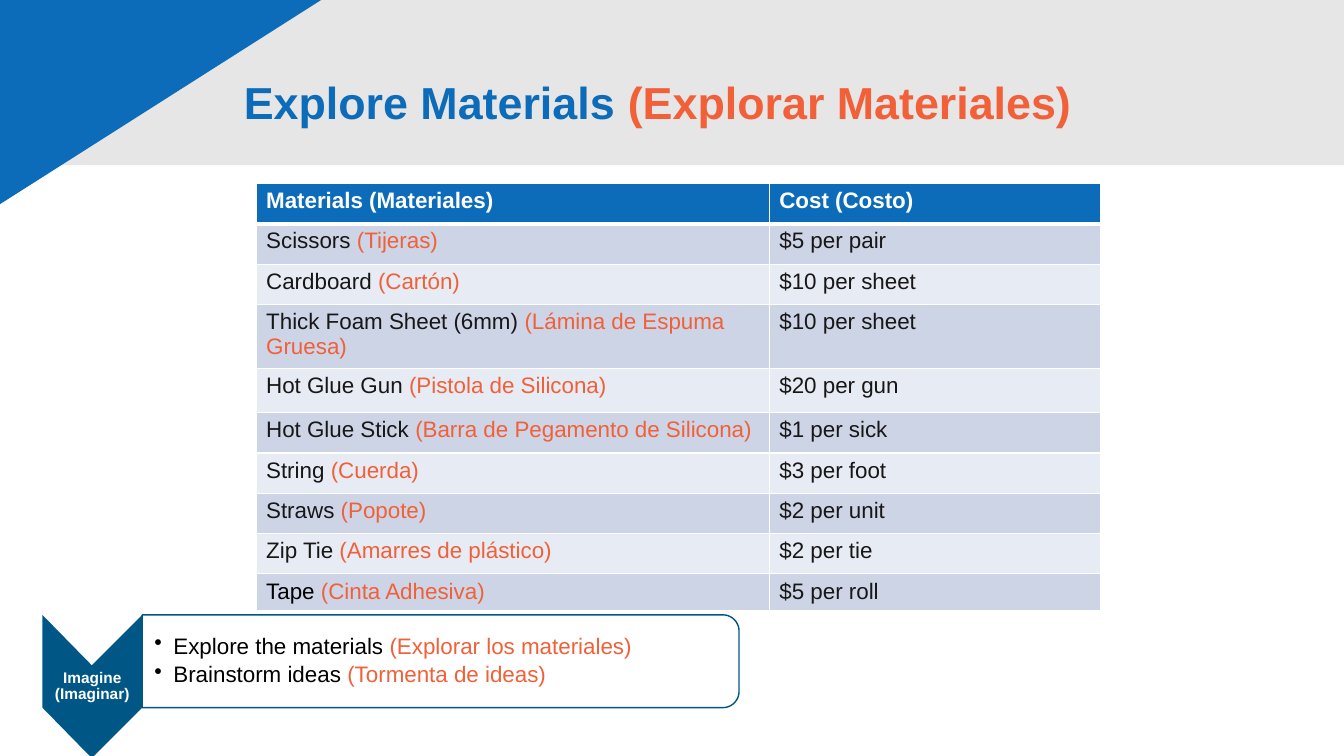
import math
from dataclasses import dataclass

from lxml import etree
from pptx import Presentation
from pptx import util as u
from pptx.dml.color import RGBColor
from pptx.enum import shapes, text
from pptx.oxml import ns


@dataclass(frozen=True)
class Theme:
    font: str = "Arial"
    blue: str = "0D6CB9"
    navy: str = "005786"
    orange: str = "F16038"
    grey: str = "E7E6E6"
    ink: str = "181717"
    black: str = "000000"
    white: str = "FFFFFF"
    bands: tuple = ("CCD4E6", "E7EBF3")
    title_size: int = 32
    body_size: int = 16
    label_size: int = 11


class SlideBuilder:
    def __init__(self, slide, theme):
        self.slide = slide
        self.theme = theme

    def paint(self, shape, fill, line=None):
        shape.shadow.inherit = False
        shape.fill.solid()
        shape.fill.fore_color.rgb = RGBColor.from_string(fill)
        if line:
            shape.line.color.rgb = RGBColor.from_string(line)
            shape.line.width = u.Pt(1)
        else:
            shape.line.fill.background()
        return shape

    def preset(self, kind, box, fill):
        shape = self.slide.shapes.add_shape(kind, *map(u.Inches, box))
        return self.paint(shape, fill)

    def outline(self, points, fill, line=None):
        """Draw a closed polygon through points given in inches."""
        corners = [(u.Inches(x), u.Inches(y)) for x, y in points]
        builder = self.slide.shapes.build_freeform(*corners[0])
        builder.add_line_segments(corners[1:], close=True)
        return self.paint(builder.convert_to_shape(), fill, line)

    def text_box(self, box):
        return self.slide.shapes.add_textbox(*map(u.Inches, box))

    def frame(self, shape, insets=(0.1, 0.05, 0.1, 0.05)):
        """Return the wrapped, vertically centred text frame of a shape."""
        frame = shape.text_frame
        frame.word_wrap = True
        frame.vertical_anchor = text.MSO_ANCHOR.MIDDLE
        (frame.margin_left, frame.margin_top,
         frame.margin_right, frame.margin_bottom) = map(u.Inches, insets)
        return frame

    def add_runs(self, paragraph, runs, size, bold=False, spacing=0.9,
                 align=text.PP_ALIGN.LEFT):
        """Add (words, colour) runs to a paragraph."""
        paragraph.alignment = align
        paragraph.line_spacing = spacing
        for words, colour in runs:
            run = paragraph.add_run()
            run.text = words
            run.font.name = self.theme.font
            run.font.size = u.Pt(size)
            run.font.bold = bold
            run.font.color.rgb = RGBColor.from_string(colour)

    def bullets(self, frame, items):
        for index, runs in enumerate(items):
            paragraph = frame.add_paragraph() if index else frame.paragraphs[0]
            paragraph.space_after = u.Pt(3)
            self.add_runs(paragraph, runs, self.theme.body_size)
            properties = paragraph._p.get_or_add_pPr()
            properties.set("marL", str(u.Inches(0.19)))
            properties.set("indent", str(-u.Inches(0.19)))
            etree.SubElement(properties, ns.qn("a:buChar"), char="•")

    def cell(self, cell, runs, fill, bold=False, bottom=1):
        """Fill one table cell and give it white borders."""
        self.add_runs(cell.text_frame.paragraphs[0], runs, self.theme.body_size, bold, 1.0)
        properties = cell._tc.get_or_add_tcPr()
        for side, width in (("L", 1), ("R", 1), ("T", 1), ("B", bottom)):
            border = etree.SubElement(properties, ns.qn(f"a:ln{side}"), w=str(u.Pt(width)))
            solid = etree.SubElement(border, ns.qn("a:solidFill"))
            etree.SubElement(solid, ns.qn("a:srgbClr"), val=self.theme.white)
        cell.fill.solid()
        cell.fill.fore_color.rgb = RGBColor.from_string(fill)

    def table(self, box, widths, heights, header, rows):
        graphic = self.slide.shapes.add_table(
            len(heights), len(widths), *map(u.Inches, box))
        table = graphic.table
        table.first_row = table.horz_banding = False
        for column, width in zip(table.columns, widths):
            column.width = u.Inches(width)
        for row, height in zip(table.rows, heights):
            row.height = u.Inches(height)
        for column, words in enumerate(header):
            self.cell(table.cell(0, column), [(words, self.theme.white)],
                      self.theme.blue, bold=True, bottom=3)
        for index, row in enumerate(rows):
            for column, runs in enumerate(row):
                self.cell(table.cell(index + 1, column), runs, self.theme.bands[index % 2])


MATERIALS = [
    ("Scissors", "(Tijeras)", "$5 per pair"),
    ("Cardboard", "(Cartón)", "$10 per sheet"),
    ("Thick Foam Sheet (6mm)", "(Lámina de Espuma Gruesa)", "$10 per sheet"),
    ("Hot Glue Gun", "(Pistola de Silicona)", "$20 per gun"),
    ("Hot Glue Stick", "(Barra de Pegamento de Silicona)", "$1 per sick"),
    ("String", "(Cuerda)", "$3 per foot"),
    ("Straws", "(Popote)", "$2 per unit"),
    ("Zip Tie", "(Amarres de plástico)", "$2 per tie"),
    ("Tape", "(Cinta Adhesiva)", "$5 per roll"),
]
STEPS = [
    ("Explore the materials", "(Explorar los materiales)"),
    ("Brainstorm ideas", "(Tormenta de ideas)"),
]


def right_rounded(left, top, right, bottom, radius):
    """Points of a rectangle whose two right corners are rounded."""
    points = [(left, bottom), (left, top)]
    for centre_y, start in ((top + radius, -90), (bottom - radius, 0)):
        for degrees in range(start, start + 91, 6):
            angle = math.radians(degrees)
            points.append((right - radius + radius * math.cos(angle),
                           centre_y + radius * math.sin(angle)))
    return points


def main():
    theme = Theme()
    presentation = Presentation()
    presentation.slide_width = u.Inches(13.33)
    presentation.slide_height = u.Inches(7.5)
    slide = presentation.slides.add_slide(presentation.slide_layouts[6])
    builder = SlideBuilder(slide, theme)

    def bilingual(english, spanish, colour):
        return [(english + " ", colour), (spanish, theme.orange)]

    kind = shapes.MSO_SHAPE
    builder.preset(kind.RECTANGLE, (-0.26, -0.19, 13.59, 1.83), theme.grey)
    corner = builder.preset(kind.RIGHT_TRIANGLE, (-2.57, -1.72, 8.46, 5.38), theme.blue)
    corner.rotation = 180
    corner._element.spPr.xfrm.set("flipH", "1")

    left, middle, right = 0.42, 0.91, 1.41
    top, bottom, notch = 6.1, 7.02, 0.5
    chevron = builder.outline(
        [(right, top), (right, bottom), (middle, bottom + notch),
         (left, bottom), (left, top), (middle, top + notch)], theme.navy)
    label = builder.frame(chevron, (0.01, 0.47, 0.01, 0.47))
    builder.add_runs(label.paragraphs[0], [("Imagine (Imaginar)", theme.white)],
                     theme.label_size, bold=True, align=text.PP_ALIGN.CENTER)

    panel = builder.outline(right_rounded(right, top, 7.33, bottom, 0.16),
                            theme.white, theme.navy)
    builder.bullets(builder.frame(panel, (0.12, 0.05, 0.05, 0.05)),
                    [bilingual(*step, theme.black) for step in STEPS])

    title = builder.frame(builder.text_box((2.32, 0.32, 9.7, 1.45)))
    builder.add_runs(title.paragraphs[0],
                     bilingual("Explore Materials", "(Explorar Materiales)", theme.blue),
                     theme.title_size, bold=True)

    rows = [(bilingual(english, spanish, theme.black if english == "Tape" else theme.ink),
             [(cost, theme.ink)]) for english, spanish, cost in MATERIALS]
    builder.table((2.54, 1.82, 8.38, 4.23), (5.09, 3.29),
                  [0.4] * 4 + [0.44] + [0.4] * 4 + [0.17],
                  ("Materials (Materiales)", "Cost (Costo)"), rows)
    presentation.save("out.pptx")


if __name__ == "__main__":
    main()
